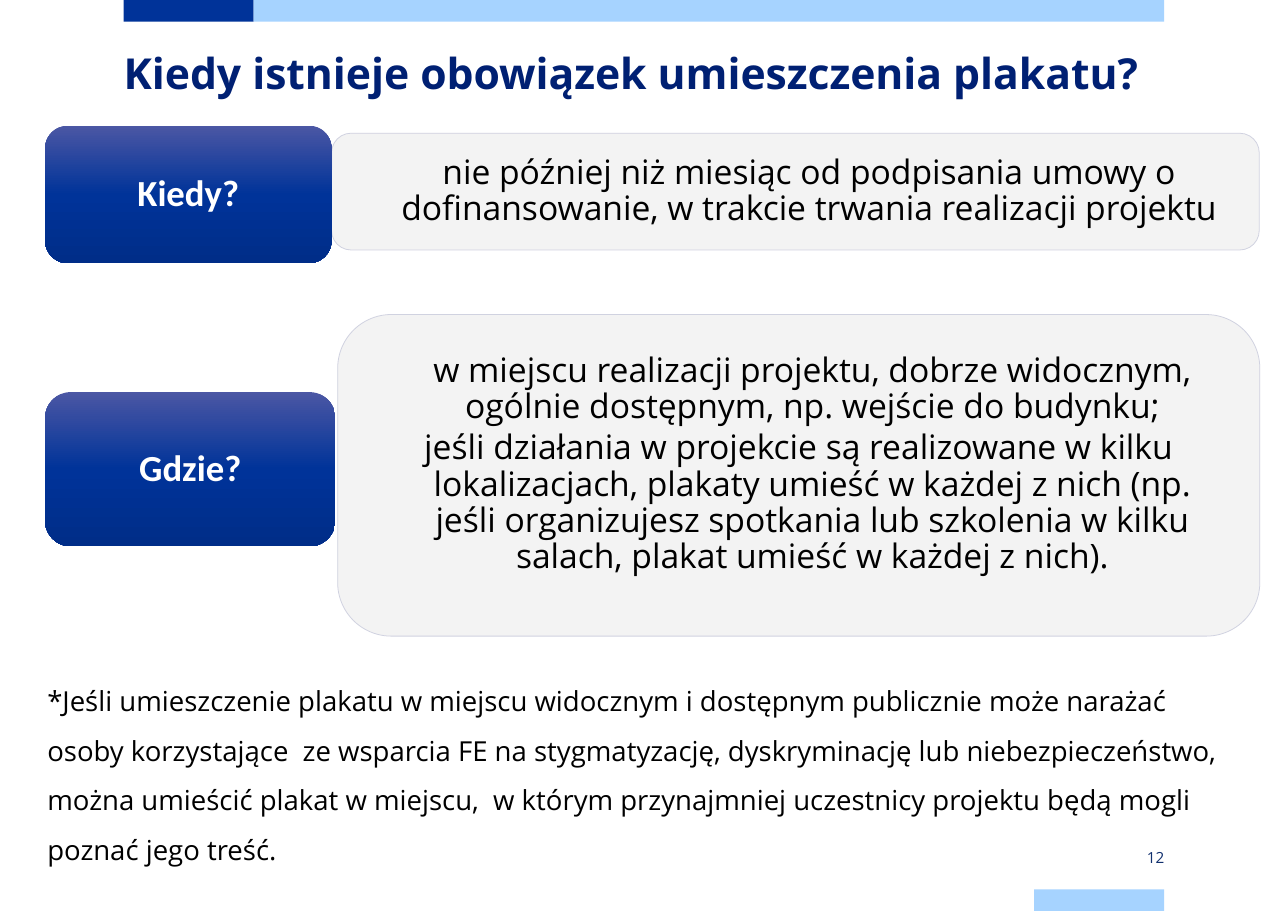
import copy

import lxml.etree
import pptx
import pptx.dml.color
import pptx.enum.shapes
import pptx.enum.text
import pptx.oxml.ns
import pptx.util

Pt = pptx.util.Pt
RGB = pptx.dml.color.RGBColor.from_string
qn = pptx.oxml.ns.qn
SHAPE = pptx.enum.shapes.MSO_SHAPE
ALIGN = pptx.enum.text.PP_ALIGN
ANCHOR = pptx.enum.text.MSO_ANCHOR

THEME = {
    "navy": "003399", "sky": "A6D3FF", "panel": "F2F2F2", "panel_line": "CCCEDE",
    "gradient": [(0, "4B57A4"), (0.5, "003399"), (1, "002D88")],
    "title": {"name": "Open Sans", "size": Pt(27.9), "bold": True, "color": "002073"},
    "body": {"name": "Open Sans", "size": Pt(22), "bold": False, "color": "000000"},
    "label": {"name": "Calibri", "size": Pt(24), "bold": True, "color": "FFFFFF"},
    "note": {"name": "Open Sans", "size": Pt(18), "bold": False, "color": "000000"},
    "number": {"name": "Open Sans", "size": Pt(10), "bold": False, "color": "11306E"},
}


def add_box(kind, box, fill=None):
    sp = s.shapes.add_shape(kind, *map(Pt, box))
    sp.shadow.inherit = False
    sp.line.fill.background()
    if fill:
        sp.fill.solid()
        sp.fill.fore_color.rgb = RGB(fill)
    return sp


def write(sp, style, texts, insets, anchor, para):
    """Fill a shape with paragraphs; insets run left, top, right, bottom."""
    tf = sp.text_frame
    frame = dict(zip(("margin_left", "margin_top", "margin_right", "margin_bottom"),
                     map(Pt, insets)), word_wrap=True, vertical_anchor=anchor)
    for key, value in frame.items():
        setattr(tf, key, value)
    for i, text in enumerate(texts):
        p = tf.paragraphs[0] if i == 0 else tf.add_paragraph()
        for key, value in para.items():
            setattr(p, key, value)
        r = p.add_run()
        r.text = text
        for key, value in THEME[style].items():
            if key == "color":
                r.font.color.rgb = RGB(value)
            else:
                setattr(r.font, key, value)
    return tf


prs = pptx.Presentation()
prs.slide_width, prs.slide_height = Pt(841.68), Pt(595.44)
s = prs.slides.add_slide(prs.slide_layouts[6])

# Top and bottom bars
for box, color in [
    ((80.8, 0, 85, 14.2), "navy"),
    ((165.8, 0, 595, 14.2), "sky"),
    ((675.8, 581.24, 85, 14.2), "sky"),
]:
    add_box(SHAPE.RECTANGLE, box, THEME[color])

# Title
sp = s.shapes.add_textbox(*map(Pt, (80.8, 28, 680, 54)))
write(sp, "title", ["Kiedy istnieje obowiązek umieszczenia plakatu?"],
      (0, 0, 0, 0), ANCHOR.TOP, {"line_spacing": Pt(36)})

# Question labels with their answer panels
rows = [
    ("Kiedy?", (29.5, 82.1, 187.2, 90), (216.7, 87.1, 606.2, 76.3), 10,
     ["nie później niż miesiąc od podpisania umowy o dofinansowanie, "
      "w trakcie trwania realizacji projektu"]),
    ("Gdzie?", (29.5, 256.3, 189.6, 100.8), (220.7, 205.6, 602.6, 210.2), 24,
     ["w miejscu realizacji projektu, dobrze widocznym, ogólnie dostępnym, "
      "np. wejście do budynku;",
      "jeśli działania w projekcie są realizowane w kilku lokalizacjach, "
      "plakaty umieść w każdej z nich (np. jeśli organizujesz spotkania lub "
      "szkolenia w kilku salach, plakat umieść w każdej z nich)."]),
]
for label, label_box, panel_box, bottom, answers in rows:
    sp = add_box(SHAPE.ROUNDED_RECTANGLE, panel_box, THEME["panel"])
    sp.line.color.rgb = RGB(THEME["panel_line"])
    sp.line.width = Pt(0.5)
    for color in sp._element.spPr.iter(qn("a:srgbClr")):
        lxml.etree.SubElement(color, qn("a:alpha")).set("val", "90000")
    tf = write(sp, "body", answers, (19.4, 10, 19.4, bottom), ANCHOR.MIDDLE,
               {"alignment": ALIGN.CENTER, "line_spacing": 0.9, "space_after": Pt(3.3)})
    for i, p in enumerate(tf.paragraphs):
        pPr = p._p.get_or_add_pPr()
        pPr.set("marL", str(Pt(18)))
        pPr.set("indent", str(Pt(-18 if i else 0)))

    sp = add_box(SHAPE.ROUNDED_RECTANGLE, label_box)
    sp.fill.gradient()
    sp.fill.gradient_angle = 270
    gs_list = sp._element.spPr.find(qn("a:gradFill")).find(qn("a:gsLst"))
    gs_list.append(copy.deepcopy(gs_list[-1]))
    for stop, (position, color) in zip(sp.fill.gradient_stops, THEME["gradient"]):
        stop.position = position
        stop.color.rgb = RGB(color)
    write(sp, "label", [label], (7.2, 3.6, 7.2, 3.6), ANCHOR.MIDDLE,
          {"alignment": ALIGN.CENTER, "line_spacing": 0.9})

# Slide number
sp = s.shapes.add_textbox(*map(Pt, (675.8, 553, 85, 14.4)))
write(sp, "number", ["12"], (0, 5.8, 0, 5.8), ANCHOR.MIDDLE, {"alignment": ALIGN.RIGHT})

# Footnote
sp = s.shapes.add_textbox(*map(Pt, (23.8, 432.7, 793.4, 134.6)))
write(sp, "note",
      ["*Jeśli umieszczenie plakatu w miejscu widocznym i dostępnym publicznie może "
       "narażać osoby korzystające  ze wsparcia FE na stygmatyzację, dyskryminację lub "
       "niebezpieczeństwo, można umieścić plakat w miejscu,  w którym przynajmniej "
       "uczestnicy projektu będą mogli poznać jego treść."],
      (7.2, 3.6, 7.2, 3.6), ANCHOR.TOP, {"line_spacing": 1.5})

prs.save("out.pptx")
